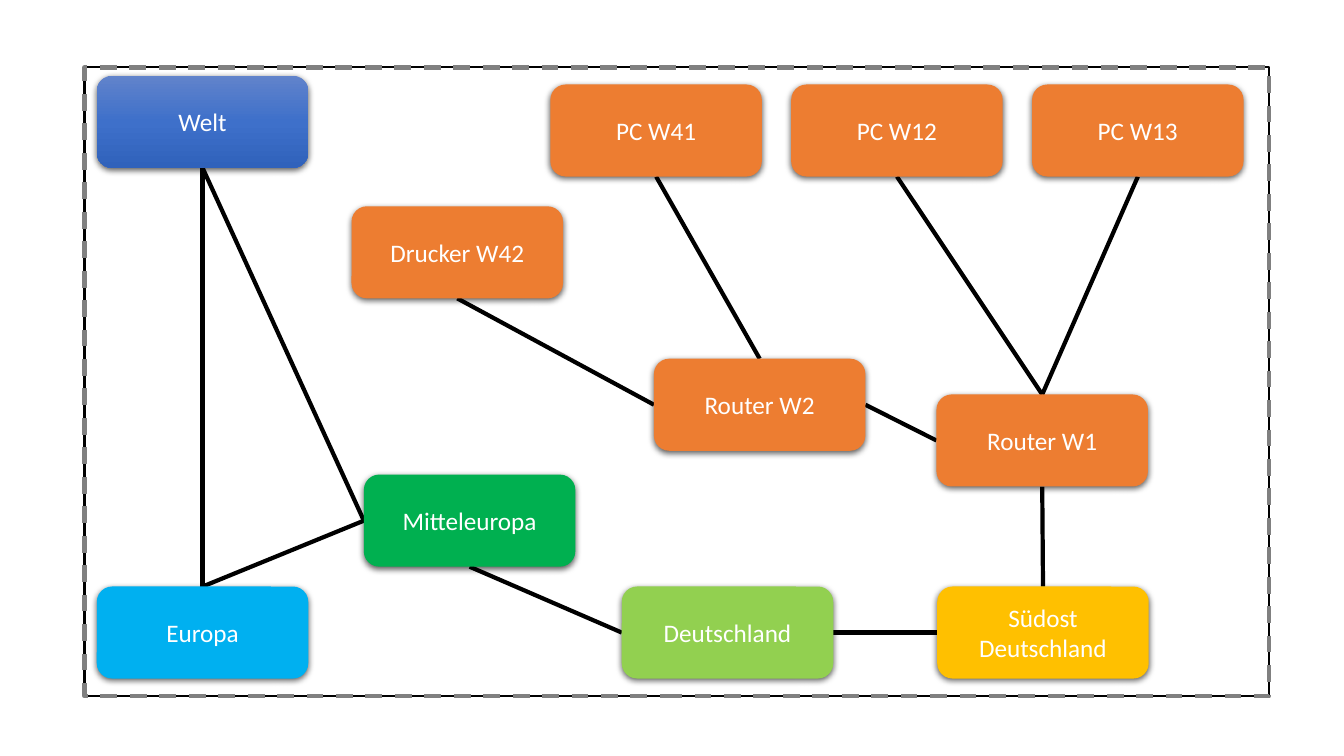
"""Builds the slide that maps the network from the world zone down to single devices."""
from copy import deepcopy
from dataclasses import dataclass

from pptx import Presentation
from pptx.dml.color import RGBColor
from pptx.enum.dml import MSO_LINE
from pptx.enum.shapes import MSO_CONNECTOR, MSO_SHAPE
from pptx.enum.text import MSO_ANCHOR, PP_ALIGN
from pptx.oxml import parse_xml
from pptx.oxml.ns import nsdecls, qn
from pptx.shapes.autoshape import Shape
from pptx.slide import Slide
from pptx.util import Cm, Pt

ROUNDED, RECTANGLE = MSO_SHAPE.ROUNDED_RECTANGLE, MSO_SHAPE.RECTANGLE
STRAIGHT = MSO_CONNECTOR.STRAIGHT
DASH = MSO_LINE.DASH
CENTER, MIDDLE = PP_ALIGN.CENTER, MSO_ANCHOR.MIDDLE
TOP, LEFT, BOTTOM, RIGHT = range(4)


@dataclass(frozen=True)
class Theme:
    """Colours, type and line widths of the slide."""

    font: str = "Calibri"
    label_size: float = 18
    label: str = "FFFFFF"
    link: str = "000000"
    link_width: float = 3
    frame_width: float = 1.5
    dashes: str = "808080"
    world: tuple[str, ...] = ("6183CB", "3E70CA", "3062BB")
    europe: tuple[str, ...] = ("00B0F0",)
    central_europe: tuple[str, ...] = ("00B050",)
    germany: tuple[str, ...] = ("92D050",)
    southeast: tuple[str, ...] = ("FFC000",)
    device: tuple[str, ...] = ("ED7D31",)


@dataclass(frozen=True)
class Node:
    """A labelled box, placed in centimetres."""

    label: str
    left: float
    top: float
    colors: tuple[str, ...]


@dataclass(frozen=True)
class Link:
    """A line from a side of one node to a side of another."""

    start: str
    start_side: int
    end: str
    end_side: int


THEME = Theme()
NODE_WIDTH, NODE_HEIGHT = 5.33, 2.32
BOTTOM_ROW = 14.78
PC_LEFT, PC_TOP, PC_STEP = 13.87, 2.13, 6.07
FRAME = (2.13, 1.7, 29.85, 15.85)

NODES = [
    Node("Welt", 2.44, 1.91, THEME.world),
    Node("Europa", 2.44, BOTTOM_ROW, THEME.europe),
    Node("Mitteleuropa", 9.17, 11.96, THEME.central_europe),
    Node("Deutschland", 15.67, BOTTOM_ROW, THEME.germany),
    Node("Südost\nDeutschland", 23.62, BOTTOM_ROW, THEME.southeast),
    Node("Router W1", 23.6, 9.94, THEME.device),
    Node("Router W2", 16.48, 9.04, THEME.device),
    Node("Drucker W42", 8.86, 5.2, THEME.device),
    *(
        Node(label, PC_LEFT + column * PC_STEP, PC_TOP, THEME.device)
        for column, label in enumerate(("PC W41", "PC W12", "PC W13"))
    ),
]

LINKS = [
    Link("Deutschland", LEFT, "Mitteleuropa", BOTTOM),
    Link("Welt", BOTTOM, "Mitteleuropa", LEFT),
    Link("Welt", BOTTOM, "Europa", TOP),
    Link("Europa", TOP, "Mitteleuropa", LEFT),
    Link("Deutschland", RIGHT, "Südost\nDeutschland", LEFT),
    Link("Südost\nDeutschland", TOP, "Router W1", BOTTOM),
    Link("Router W1", TOP, "PC W13", BOTTOM),
    Link("Router W1", TOP, "PC W12", BOTTOM),
    Link("Router W1", LEFT, "Router W2", RIGHT),
    Link("PC W41", BOTTOM, "Router W2", TOP),
    Link("Router W2", LEFT, "Drucker W42", BOTTOM),
]


def fill_node(box: Shape, colors: tuple[str, ...]) -> None:
    """Fill a box with one colour, or with a downward gradient of three."""
    if len(colors) == 1:
        box.fill.solid()
        box.fill.fore_color.rgb = RGBColor.from_string(colors[0])
        return
    box.fill.gradient()
    box.fill.gradient_angle = 270
    stop_list = box._element.spPr.find(".//" + qn("a:gsLst"))
    stop_list.insert(1, deepcopy(stop_list[0]))
    for index, (stop, color) in enumerate(zip(box.fill.gradient_stops, colors)):
        stop.position = index / (len(colors) - 1)
        stop.color.rgb = RGBColor.from_string(color)


def drop_shadow(box: Shape) -> None:
    """Give a box a soft shadow just below it."""
    box.shadow.inherit = False
    box._element.spPr.find(qn("a:effectLst")).append(parse_xml(
        f'<a:outerShdw {nsdecls("a")} blurRad="{Pt(4.5)}" dist="{Pt(1.5)}" '
        'dir="5400000" algn="ctr" rotWithShape="0">'
        '<a:srgbClr val="000000"><a:alpha val="63000"/></a:srgbClr></a:outerShdw>'
    ))


def draw_node(slide: Slide, node: Node) -> Shape:
    """Draw one labelled box."""
    box = slide.shapes.add_shape(
        ROUNDED, Cm(node.left), Cm(node.top), Cm(NODE_WIDTH), Cm(NODE_HEIGHT)
    )
    fill_node(box, node.colors)
    box.line.fill.background()
    drop_shadow(box)
    box.text_frame.text = node.label
    box.text_frame.vertical_anchor = MIDDLE
    for paragraph in box.text_frame.paragraphs:
        paragraph.alignment = CENTER
        paragraph.font.name = THEME.font
        paragraph.font.size = Pt(THEME.label_size)
        paragraph.font.color.rgb = RGBColor.from_string(THEME.label)
    return box


def draw_link(slide: Slide, link: Link, boxes: dict[str, Shape]) -> None:
    """Join two boxes with a line that lies behind them."""
    line = slide.shapes.add_connector(STRAIGHT, 0, 0, 0, 0)
    line.begin_connect(boxes[link.start], link.start_side)
    line.end_connect(boxes[link.end], link.end_side)
    line.line.color.rgb = RGBColor.from_string(THEME.link)
    line.line.width = Pt(THEME.link_width)
    element = line._element
    element.spPr.append(parse_xml(f'<a:effectLst {nsdecls("a")}/>'))
    boxes["Welt"]._element.addprevious(element)


def draw_frame(slide: Slide, color: str, width: float, dash: MSO_LINE | None = None) -> None:
    """Outline the whole network."""
    frame = slide.shapes.add_shape(RECTANGLE, *map(Cm, FRAME))
    frame.shadow.inherit = False
    frame.fill.background()
    frame.line.color.rgb = RGBColor.from_string(color)
    frame.line.width = Pt(width)
    frame.line.dash_style = dash


def main() -> None:
    """Build and save the slide."""
    presentation = Presentation()
    presentation.slide_width, presentation.slide_height = Cm(33.87), Cm(19.05)
    slide = presentation.slides.add_slide(presentation.slide_layouts[6])
    boxes = {node.label: draw_node(slide, node) for node in NODES}
    for link in LINKS:
        draw_link(slide, link, boxes)
    draw_frame(slide, THEME.link, THEME.frame_width)
    draw_frame(slide, THEME.dashes, THEME.link_width, DASH)
    presentation.save("out.pptx")


if __name__ == "__main__":
    main()
